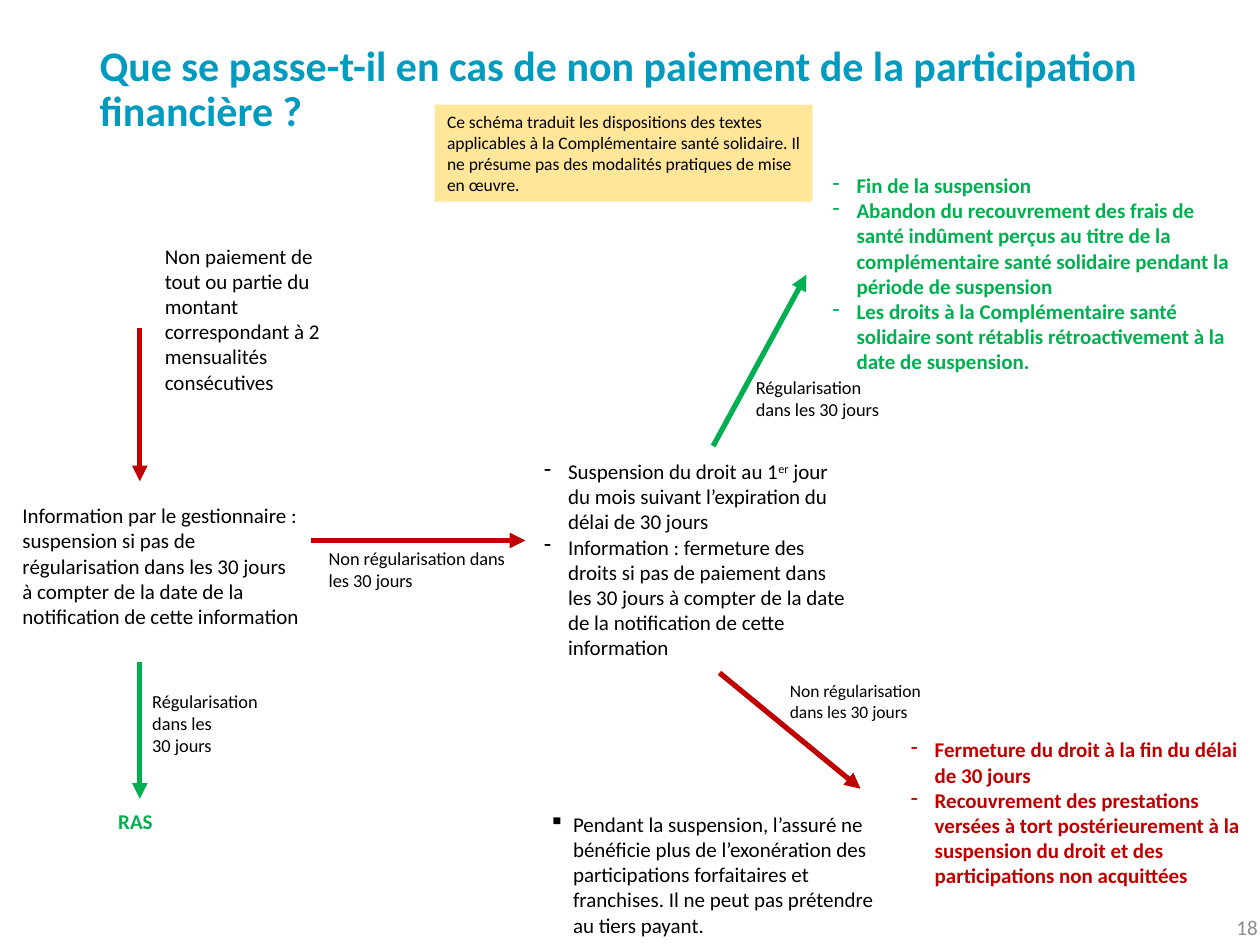
from lxml import etree
from pptx import Presentation
from pptx.dml.color import RGBColor
from pptx.enum.shapes import MSO_CONNECTOR, MSO_SHAPE
from pptx.enum.text import MSO_ANCHOR, MSO_AUTO_SIZE, PP_ALIGN
from pptx.oxml.ns import qn
from pptx.util import Inches, Pt

STRAIGHT = MSO_CONNECTOR.STRAIGHT
RECTANGLE = MSO_SHAPE.RECTANGLE
MIDDLE, TOP = MSO_ANCHOR.MIDDLE, MSO_ANCHOR.TOP
LEFT, RIGHT = PP_ALIGN.LEFT, PP_ALIGN.RIGHT
NO_AUTOFIT = MSO_AUTO_SIZE.NONE

FONT = "Calibri"
BLUE = RGBColor(0x00, 0x9B, 0xBE)
GREY = RGBColor(0x8C, 0x8C, 0x8C)
BLACK = RGBColor(0x00, 0x00, 0x00)
RED = RGBColor(0xC0, 0x00, 0x00)
GREEN = RGBColor(0x00, 0xB0, 0x50)
SAND = RGBColor(0xFF, 0xE6, 0x99)
INDENT = Inches(0.19)


def place(sp, box):
    sp.left, sp.top, sp.width, sp.height = (Inches(v) for v in box)


def add_bullet(p, char):
    pPr = p._p.get_or_add_pPr()
    pPr.set("marL", str(INDENT))
    pPr.set("indent", str(-INDENT))
    etree.SubElement(pPr, qn("a:buChar")).set("char", char)


def write(tf, paragraphs, size=12, color=BLACK, bold=False, bullet=None,
          align=LEFT, anchor=TOP):
    """Fill a frame; a paragraph is a string or a list of (text, superscript)."""
    tf.word_wrap = True
    tf.auto_size = NO_AUTOFIT
    tf.vertical_anchor = anchor
    for i, content in enumerate(paragraphs):
        p = tf.paragraphs[0] if i == 0 else tf.add_paragraph()
        p.alignment = align
        if bullet:
            add_bullet(p, bullet)
        runs = [(content, False)] if isinstance(content, str) else content
        for text, superscript in runs:
            r = p.add_run()
            r.text = text
            r.font.name, r.font.size = FONT, Pt(size)
            r.font.bold, r.font.color.rgb = bold, color
            if superscript:
                r.font._element.set("baseline", "30000")


def add_title(s, text, box):
    sp = s.shapes.title
    place(sp, box)
    write(sp.text_frame, [text], size=24, color=BLUE, bold=True, anchor=MIDDLE)
    sp.text_frame.paragraphs[0].line_spacing = 0.9


def add_text(s, box, *paragraphs, **style):
    sp = s.shapes.add_textbox(*(Inches(v) for v in box))
    write(sp.text_frame, paragraphs, **style)


def add_note(s, box, text):
    sp = s.shapes.add_shape(RECTANGLE, *(Inches(v) for v in box))
    sp.shadow.inherit = False
    sp.fill.solid()
    sp.fill.fore_color.rgb = SAND
    sp.line.fill.background()
    write(sp.text_frame, [text], size=10)


def add_arrow(s, start, end, color):
    line = s.shapes.add_connector(STRAIGHT, *(Inches(v) for v in start + end))
    line.line.color.rgb = color
    line.line.width = Pt(3)
    ln = line.line._get_or_add_ln()
    etree.SubElement(ln, qn("a:tailEnd")).set("type", "triangle")
    etree.SubElement(line._element.spPr, qn("a:effectLst"))


def main():
    prs = Presentation()
    prs.slide_width, prs.slide_height = Inches(10), Inches(7.5)
    s = prs.slides.add_slide(prs.slide_layouts[5])

    # Title and page number
    add_title(s, "Que se passe-t-il en cas de non paiement de la participation "
                 "financière ?", (0.69, 0.12, 8.62, 1.19))
    add_text(s, (9.67, 7.16, 0.41, 0.4), "18", color=GREY, align=RIGHT,
             anchor=MIDDLE)

    # Arrows between the steps
    for start, end, color in [
        ((1.11, 2.6), (1.11, 3.82), RED),
        ((1.11, 5.25), (1.11, 6.34), GREEN),
        ((2.47, 4.29), (4.17, 4.29), RED),
        ((5.66, 3.54), (6.4, 2.18), GREEN),
        ((5.71, 5.34), (6.83, 6.26), RED),
    ]:
        add_arrow(s, start, end, color)

    # Steps
    add_text(s, (1.21, 1.88, 1.43, 1.31),
             "Non paiement de tout ou partie du montant correspondant à "
             "2 mensualités consécutives")
    add_text(s, (0.08, 3.94, 2.39, 1.31),
             "Information par le gestionnaire : suspension si pas de "
             "régularisation dans les 30 jours à compter de la date de la "
             "notification de cette information")
    add_text(s, (4.22, 3.59, 2.6, 1.72),
             [("Suspension du droit au 1", False), ("er", True),
              (" jour du mois suivant l’expiration du délai de 30 jours", False)],
             "Information : fermeture des droits si pas de paiement dans les "
             "30 jours à compter de la date de la notification de cette "
             "information", bullet="-")
    add_text(s, (4.26, 6.39, 2.87, 1.11),
             "Pendant la suspension, l’assuré ne bénéficie plus de "
             "l’exonération des participations forfaitaires et franchises. "
             "Il ne peut pas prétendre au tiers payant.", bullet="▪")

    # Outcomes
    add_text(s, (0.84, 6.37, 0.53, 0.3), "RAS", color=GREEN, bold=True)
    add_text(s, (6.51, 1.32, 3.47, 1.72),
             "Fin de la suspension",
             "Abandon du recouvrement des frais de santé indûment perçus au "
             "titre de la complémentaire santé solidaire pendant la période "
             "de suspension",
             "Les droits à la Complémentaire santé solidaire sont rétablis "
             "rétroactivement à la date de suspension.",
             color=GREEN, bold=True, bullet="-")
    add_text(s, (7.13, 5.8, 2.85, 1.51),
             "Fermeture du droit à la fin du délai de 30 jours",
             "Recouvrement des prestations versées à tort postérieurement à "
             "la suspension du droit et des participations non acquittées",
             color=RED, bold=True, bullet="-")

    # Arrow labels
    add_text(s, (1.11, 5.43, 1.19, 0.63),
             "Régularisation", "dans les", "30 jours", size=10.5)
    add_text(s, (2.51, 4.29, 1.75, 0.67),
             "Non régularisation dans les 30 jours", size=10.5)
    add_text(s, (5.9, 2.94, 1.22, 0.47),
             "Régularisation dans les 30 jours", size=10.5)
    add_text(s, (6.17, 5.35, 1.75, 0.74),
             "Non régularisation", "dans les 30 jours", size=10)

    # Note on the scope of the diagram
    add_note(s, (3.45, 0.83, 3, 0.77),
             "Ce schéma traduit les dispositions des textes applicables à la "
             "Complémentaire santé solidaire. Il ne présume pas des modalités "
             "pratiques de mise en œuvre.")

    prs.save("out.pptx")


if __name__ == "__main__":
    main()
